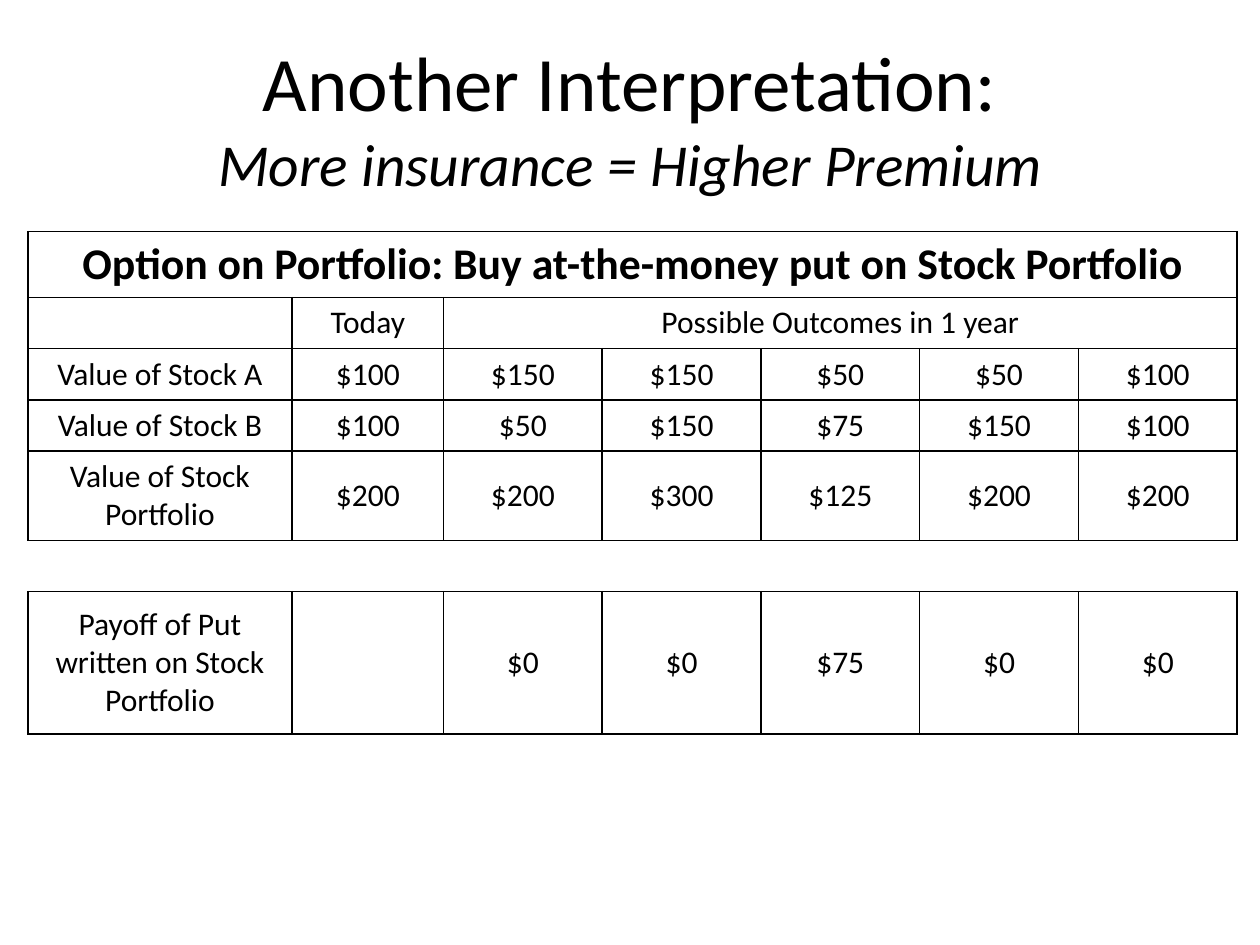
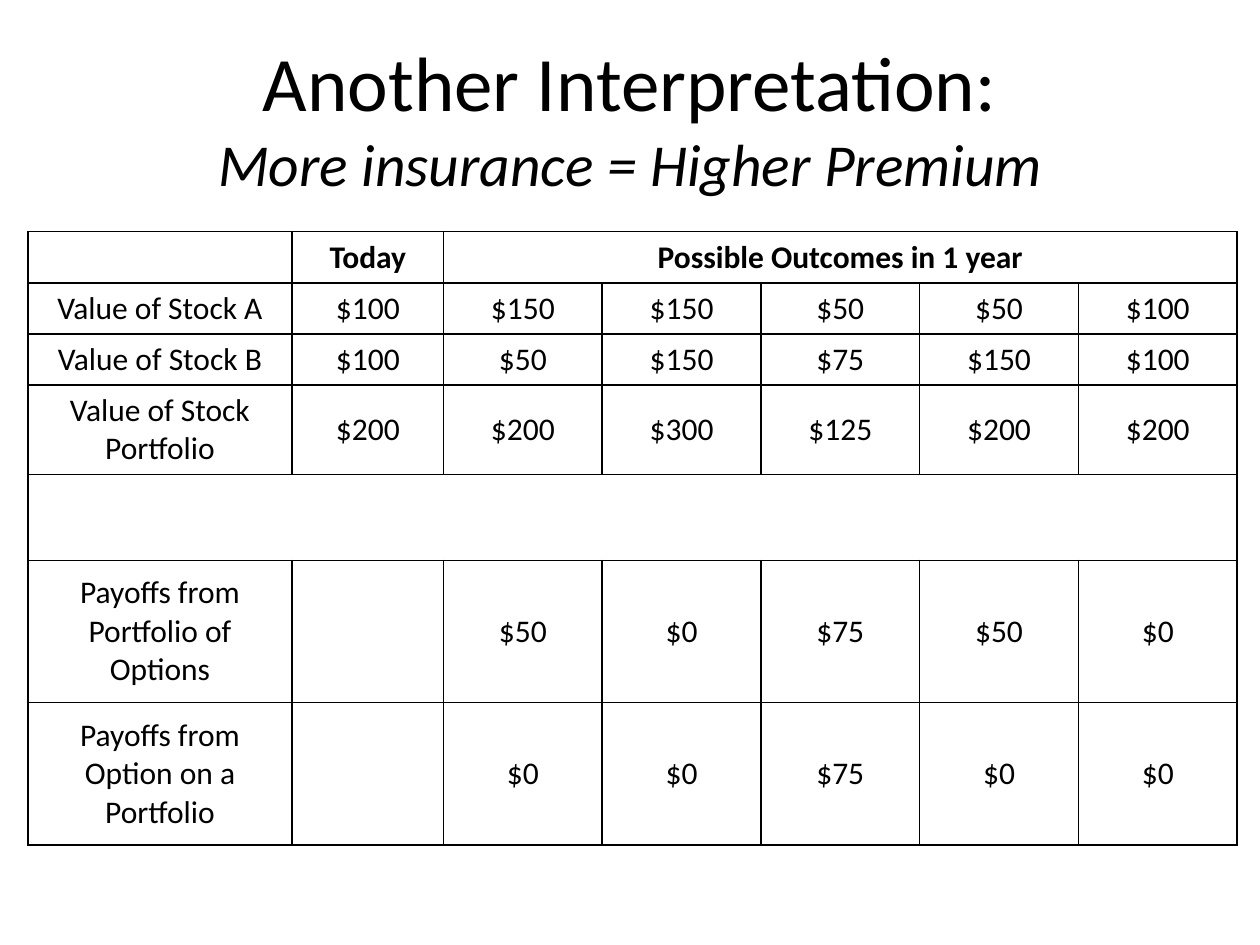
from lxml.etree import SubElement
from pptx import Presentation
from pptx.dml.color import RGBColor
from pptx.enum.text import MSO_ANCHOR, MSO_AUTO_SIZE, PP_ALIGN
from pptx.oxml.ns import qn
from pptx.util import Cm, Pt

BLACK = RGBColor(0, 0, 0)
WHITE = RGBColor(255, 255, 255)
FONT = "Calibri"
COLS = [5.33, 3.05] + [3.2] * 5
LINE, PAIR, TRIO = 1.03, 1.79, 2.87
HEAD = ("", "Today", "Possible Outcomes in 1 year")
STOCKS = [
    (LINE, ("Value of Stock A", "$100", "$150", "$150", "$50", "$50", "$100")),
    (LINE, ("Value of Stock B", "$100", "$50", "$150", "$75", "$150", "$100")),
    (PAIR, ("Value of Stock Portfolio", "$200", "$200", "$300", "$125", "$200", "$200")),
]
PUT = ("", "$0", "$0", "$75", "$0", "$0")
BLANK = ("",) * len(COLS)


def write(para, text, size=18, bold=False, italic=False):
    para.alignment = PP_ALIGN.CENTER
    run = para.add_run()
    run.text = text
    font = run.font
    font.name, font.size = FONT, Pt(size)
    font.bold, font.italic = bold, italic
    font.color.rgb = BLACK


def add_title(slide):
    title = slide.shapes.title
    title.left, title.top = Cm(1.27), Cm(0.76)
    title.width, title.height = Cm(22.86), Cm(3.18)
    frame = title.text_frame
    frame.auto_size = MSO_AUTO_SIZE.NONE
    frame.vertical_anchor = MSO_ANCHOR.MIDDLE
    para = frame.paragraphs[0]
    write(para, "Another Interpretation:", size=44)
    para.add_line_break()
    write(para, "More insurance = Higher Premium", size=34, italic=True)


def add_edges(cell, sides):
    props = cell._tc.get_or_add_tcPr()
    for side in "LRTB":
        edge = SubElement(props, qn(f"a:ln{side}"), w=str(Pt(1)))
        if side in sides:
            fill = SubElement(edge, qn("a:solidFill"))
            SubElement(fill, qn("a:srgbClr"), val=str(BLACK))
        else:
            SubElement(edge, qn("a:noFill"))


def add_grid(slide, rows, **head):
    count = len(COLS)
    high = sum(height for height, _ in rows)
    grid = slide.shapes.add_table(
        len(rows), count, Cm(0.56), Cm(4.67), Cm(sum(COLS)), Cm(high)
    ).table
    grid.first_row = grid.horz_banding = False
    for col, width in zip(grid.columns, COLS):
        col.width = Cm(width)
    for num, (height, texts) in enumerate(rows):
        grid.rows[num].height = Cm(height)
        sides = "TB" if texts == BLANK else "LRTB"
        for pos in range(count):
            cell = grid.cell(num, pos)
            add_edges(cell, sides)
            cell.fill.solid()
            cell.fill.fore_color.rgb = WHITE
            cell.vertical_anchor = MSO_ANCHOR.MIDDLE
            if pos < len(texts) and texts[pos]:
                style = head if num == 0 else {}
                write(cell.text_frame.paragraphs[0], texts[pos], **style)
        last = len(texts) - 1
        if last < count - 1:
            grid.cell(num, last).merge(grid.cell(num, count - 1))


def add_page(deck, rows, **head):
    slide = deck.slides.add_slide(deck.slide_layouts[5])
    add_title(slide)
    add_grid(slide, rows, **head)


def main():
    deck = Presentation()
    deck.slide_width, deck.slide_height = Cm(25.4), Cm(19.05)
    add_page(deck, [
        (1.33, ("Option on Portfolio: Buy at-the-money put on Stock Portfolio",)),
        (LINE, HEAD),
        *STOCKS,
        (LINE, BLANK),
        (TRIO, ("Payoff of Put written on Stock Portfolio", *PUT)),
    ], size=25, bold=True)
    add_page(deck, [
        (LINE, HEAD),
        *STOCKS,
        (1.73, ("",)),
        (TRIO, ("Payoffs from Portfolio of Options", "", "$50", "$0", "$75", "$50", "$0")),
        (TRIO, ("Payoffs from Option on a Portfolio", *PUT)),
    ], bold=True)
    deck.save("out.pptx")


if __name__ == "__main__":
    main()
